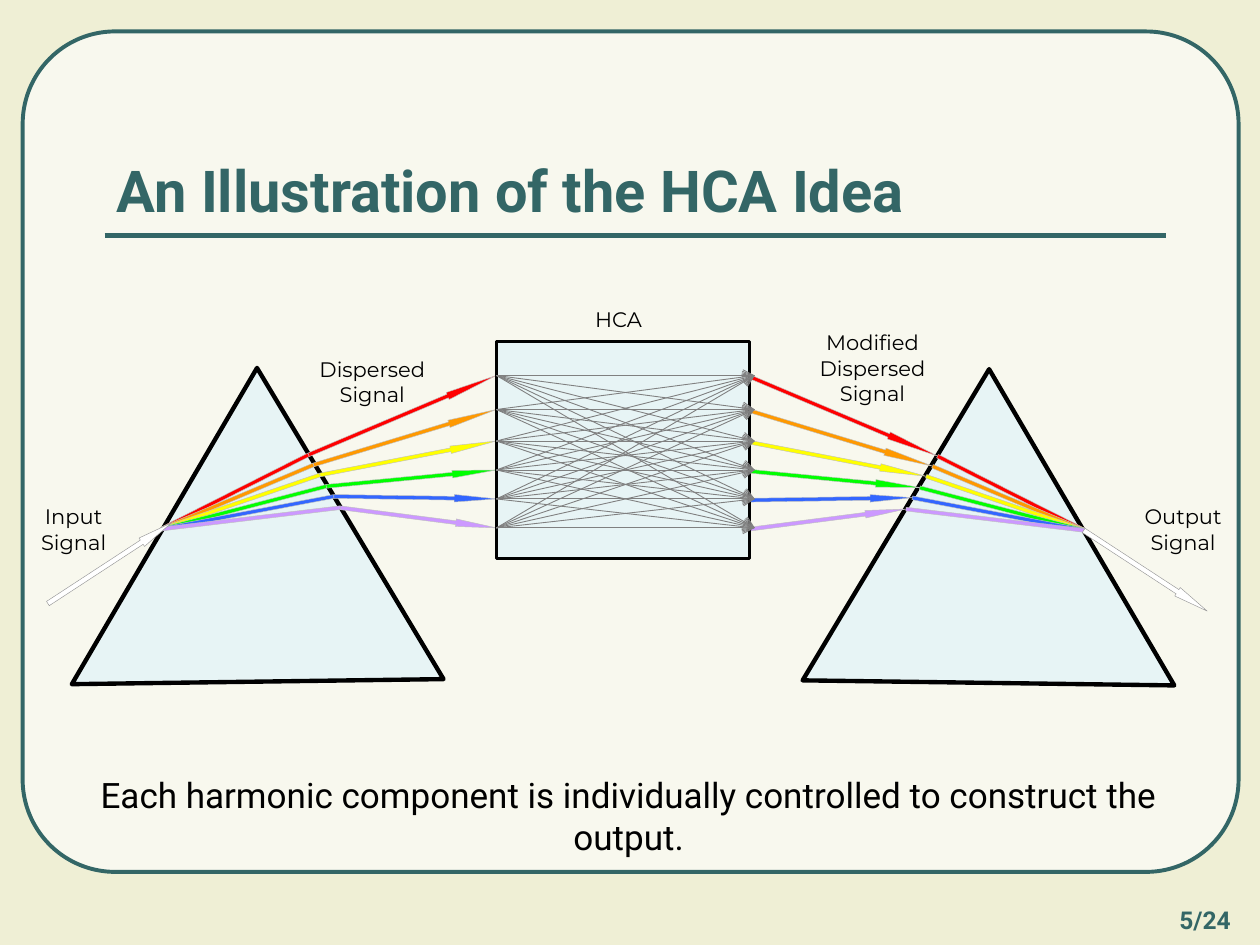
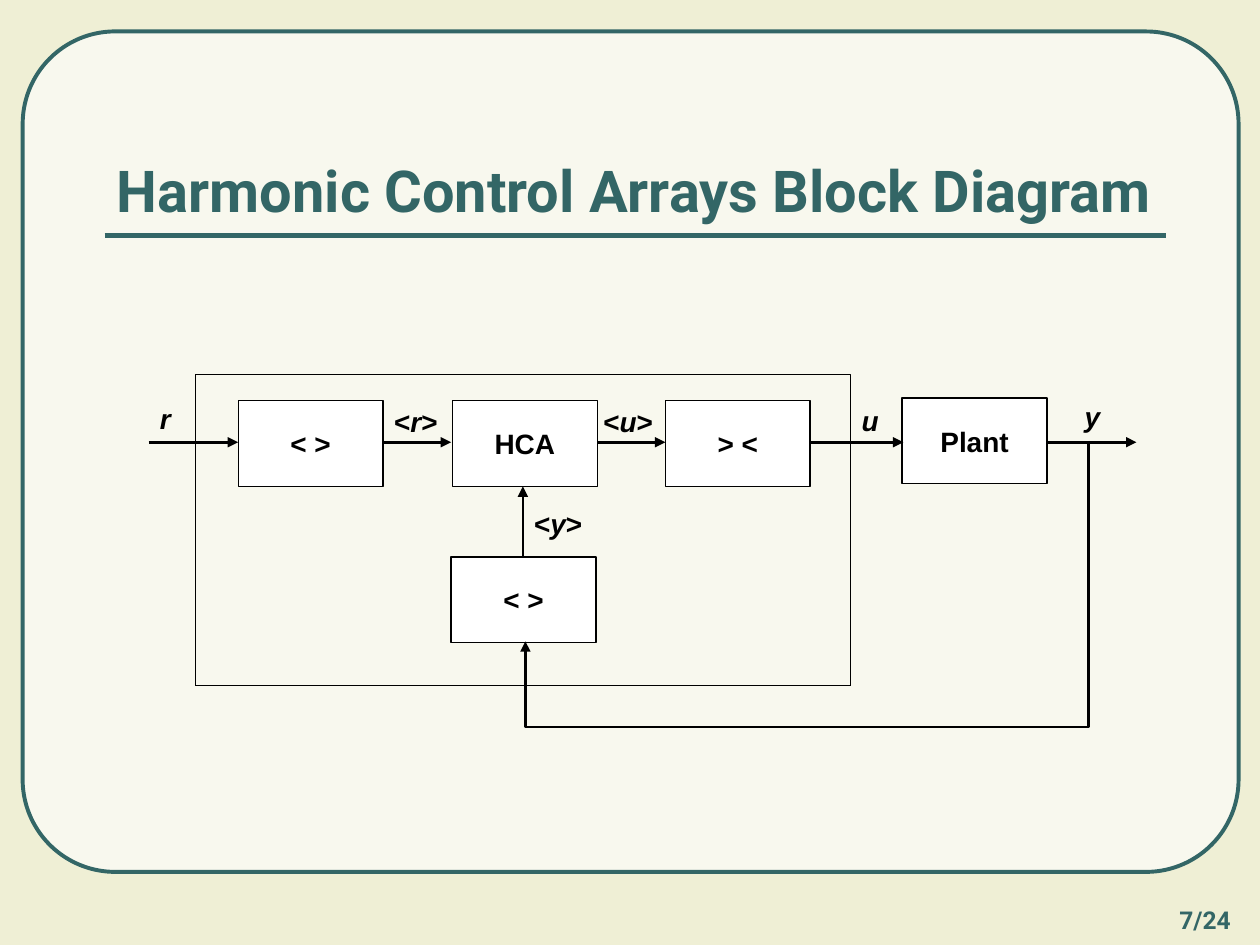
import math
from dataclasses import dataclass
from lxml import etree
from pptx import Presentation, util as u
from pptx.dml.color import RGBColor
from pptx.enum import dml, shapes, text
from pptx.oxml.ns import qn

KIND = shapes.MSO_SHAPE


class Theme:
    back, card, teal = "EFEFD5", "F8F8EE", "336666"
    glass, black, white = "E7F4F5", "000000", "FFFFFF"
    edge, rim, mesh = "C0C0C0", "969696", "808080"
    head, body, label, block, page = 33, 20, 12, 16, 14
    sans, note, plain = "Roboto", "Montserrat", "Arial"


def paint(form, color):
    form.solid()
    form.fore_color.rgb = RGBColor.from_string(color)


def write(frame, words, size=Theme.label, font=Theme.note, color=Theme.black,
          bold=False, slant="", align="CENTER", anchor="TOP", wrap=True):
    """Fill a text frame, one paragraph a line; slant is the part in italics."""
    frame.word_wrap = wrap
    frame.vertical_anchor = text.MSO_ANCHOR[anchor]
    for i, line in enumerate(words.split("\n")):
        para = frame.paragraphs[0] if i == 0 else frame.add_paragraph()
        para.alignment = text.PP_ALIGN[align]
        for part in filter(None, line.partition(slant) if slant else [line]):
            run = para.add_run()
            run.text = part
            run.font.size, run.font.name = u.Pt(size), font
            run.font.bold, run.font.italic = bold, part == slant
            paint(run.font.fill, color)


@dataclass
class Pane:
    """A region of a slide; all lengths are inches from its corner."""
    slide: object
    x: float = 0
    y: float = 0

    def spot(self, x, y):
        return u.Inches(self.x + x), u.Inches(self.y + y)

    def place(self, box):
        return *self.spot(*box[:2]), u.Inches(box[2]), u.Inches(box[3])

    def label(self, box, words, **fmt):
        item = self.slide.shapes.add_textbox(*self.place(box))
        write(item.text_frame, words, **fmt)

    def style(self, item, fill, line, width, arrow=None):
        item.shadow.inherit = False
        if fill:
            paint(item.fill, fill)
        else:
            item.fill.background()
        self.stroke(item, line, width, arrow)

    def stroke(self, item, color, width, arrow):
        paint(item.line.fill, color)
        item.line.width = u.Pt(width)
        if arrow:
            edge = item.element.spPr.find(qn("a:ln"))
            etree.SubElement(edge, qn("a:tailEnd"), type=arrow)

    def shape(self, kind, box, fill, line, width):
        item = self.slide.shapes.add_shape(kind, *self.place(box))
        self.style(item, fill, line, width)
        return item

    def link(self, start, end, color=Theme.black, width=1.5, arrow="triangle"):
        item = self.slide.shapes.add_connector(
            shapes.MSO_CONNECTOR.STRAIGHT, *self.spot(*start), *self.spot(*end))
        self.stroke(item, color, width, arrow)
        etree.SubElement(item.element.spPr, qn("a:effectLst"))

    def trace(self, points, fill, width, arrow=None):
        first, *rest = [self.spot(*p) for p in points]
        path = self.slide.shapes.build_freeform(*first, scale=1)
        path.add_line_segments(rest, close=bool(fill))
        self.style(path.convert_to_shape(), fill, Theme.black, width, arrow)

    def beam(self, start, end, color, thick, head=0, edge=Theme.edge):
        """Thin bar between two points; head is the arrowhead's share."""
        (ax, ay), (bx, by) = start, end
        size = math.dist(start, end)
        box = ((ax + bx - size) / 2, (ay + by - thick) / 2, size, thick)
        kind = KIND.RIGHT_ARROW if head else KIND.RECTANGLE
        item = self.shape(kind, box, color, edge, 0.25)
        item.rotation = math.degrees(math.atan2(by - ay, bx - ax))
        if head:
            item.adjustments[1] = head * size / thick


def base(deck, title, page):
    """Background, card, rule, page number and title."""
    slide = deck.slides.add_slide(deck.slide_layouts[6])
    paint(slide.background.fill, Theme.back)
    pane = Pane(slide)
    card = pane.shape(KIND.ROUNDED_RECTANGLE, (0.18, 0.25, 9.65, 6.67),
                      Theme.card, Theme.teal, 2.25)
    card.adjustments[0] = 0.11
    pane.link((0.83, 1.87), (9.25, 1.87), Theme.teal, 3, None)
    bold = dict(font=Theme.sans, color=Theme.teal, bold=True)
    pane.label((9.1, 7.13, 0.93, 0.5), page, size=Theme.page, **bold)
    pane.label((0.83, 0.58, 8.42, 1.25), title, size=Theme.head,
               align="LEFT", anchor="BOTTOM", **bold)
    return slide


# Colour, bend on the prism face, height of the port on the array
RAYS = [
    ("FF0000", (2.45, 1.61), 0.98),
    ("FF9900", (2.49, 1.69), 1.25),
    ("FFFF00", (2.54, 1.77), 1.50),
    ("00FF00", (2.59, 1.86), 1.73),
    ("3366FF", (2.65, 1.94), 1.96),
    ("CC99FF", (2.70, 2.03), 2.19),
]


def prism(pane, flip):
    """Prism with its rays; flip mirrors it and sends the light out."""
    def turn(x, y):
        return (9.89 - x, y + 0.01) if flip else (x, y)

    corners = [(0.57, 3.43), (2.04, 0.92), (3.52, 3.39)]
    pane.trace([turn(*p) for p in corners], Theme.glass, 2.5)
    for color, bend, port in RAYS:
        pane.beam(turn(1.28, 2.2), turn(*bend), color, 0.03)
    for color, bend, port in RAYS:
        ends = [turn(*bend), turn(3.94, port)]
        pane.beam(*(ends[::-1] if flip else ends), color, 0.06, 0.26)


def optics(slide, x, y):
    """Two prisms with the array between them."""
    pane = Pane(slide, x, y)
    for box, words in [
        ((0.2, 1.95, 0.77, 0.5), "Input\nSignal"),
        ((2.4, 0.78, 1.11, 0.5), "Dispersed\nSignal"),
        ((4.61, 0.38, 0.6, 0.3), "HCA"),
        ((6.33, 0.57, 1.19, 0.7), "Modified\nDispersed\nSignal"),
        ((8.98, 1.95, 0.82, 0.5), "Output\nSignal"),
    ]:
        pane.label(box, words, wrap=False)
    ends = [((0.38, 2.79), (1.36, 2.15)), ((8.6, 2.21), (9.58, 2.85))]
    for flip, (start, end) in enumerate(ends):
        prism(pane, flip)
        pane.beam(start, end, Theme.white, 0.08, 0.24, Theme.rim)
    # Array: every port on the left feeds every port on the right
    pane.shape(KIND.RECTANGLE, (3.94, 0.71, 2.01, 1.72),
               Theme.glass, Theme.black, 1.75)
    ports = [port for _, _, port in RAYS]
    for a in ports:
        for b in ports:
            pane.link((3.94, a), (5.99, b), Theme.mesh, 0.5, "arrow")


def loop(slide, x, y):
    """Block diagram of the control loop."""
    pane = Pane(slide, x, y)
    bold = dict(size=Theme.block, font=Theme.plain, bold=True)
    # Signal names
    for left, top, words in [
        (0.17, 0.24, "r"), (2.03, 0.26, "<r>"), (3.69, 0.26, "<u>"),
        (5.74, 0.25, "u"), (7.51, 0.22, "y"), (3.14, 1.07, "<y>"),
    ]:
        pane.label((left, top, 0.83, 0.52), words, align="LEFT",
                   slant=words.strip("<>"), **bold)
    # Blocks
    for left, top, words in [
        (0.89, 0.28, "< >"), (2.59, 0.28, "HCA"), (4.28, 0.28, "> <"),
        (2.58, 1.52, "< >"), (6.16, 0.26, "Plant"),
    ]:
        item = pane.shape(KIND.RECTANGLE, (left, top, 1.15, 0.68),
                          Theme.white, Theme.black, 0.75)
        write(item.text_frame, words, anchor="MIDDLE", **bold)
    # Controller outline
    item = pane.shape(KIND.RECTANGLE, (0.55, 0.07, 5.2, 2.47),
                      None, Theme.black, 0.25)
    item.line.dash_style = dml.MSO_LINE.ROUND_DOT
    # Signal paths
    for a, b in [(0.18, 0.89), (2.04, 2.58), (3.74, 4.28),
                 (5.44, 6.17), (7.31, 8.02)]:
        pane.link((a, 0.61), (b, 0.61))
    pane.link((3.15, 1.51), (3.15, 0.96))
    pane.trace([(7.64, 0.6), (7.64, 2.87), (3.17, 2.87), (3.17, 2.19)],
               None, 1.5, "triangle")


def main():
    deck = Presentation()
    deck.slide_width, deck.slide_height = u.Inches(10), u.Inches(7.5)

    slide = base(deck, "An Illustration of the HCA Idea", "5/24")
    optics(slide, 0, 2)
    Pane(slide).label(
        (0.42, 6.09, 9.14, 0.43),
        "Each harmonic component is individually controlled to construct the output.",
        size=Theme.body, font=Theme.sans)

    slide = base(deck, "Harmonic Control Arrays Block Diagram", "7/24")
    loop(slide, 1, 2.9)
    deck.save("out.pptx")


if __name__ == "__main__":
    main()
